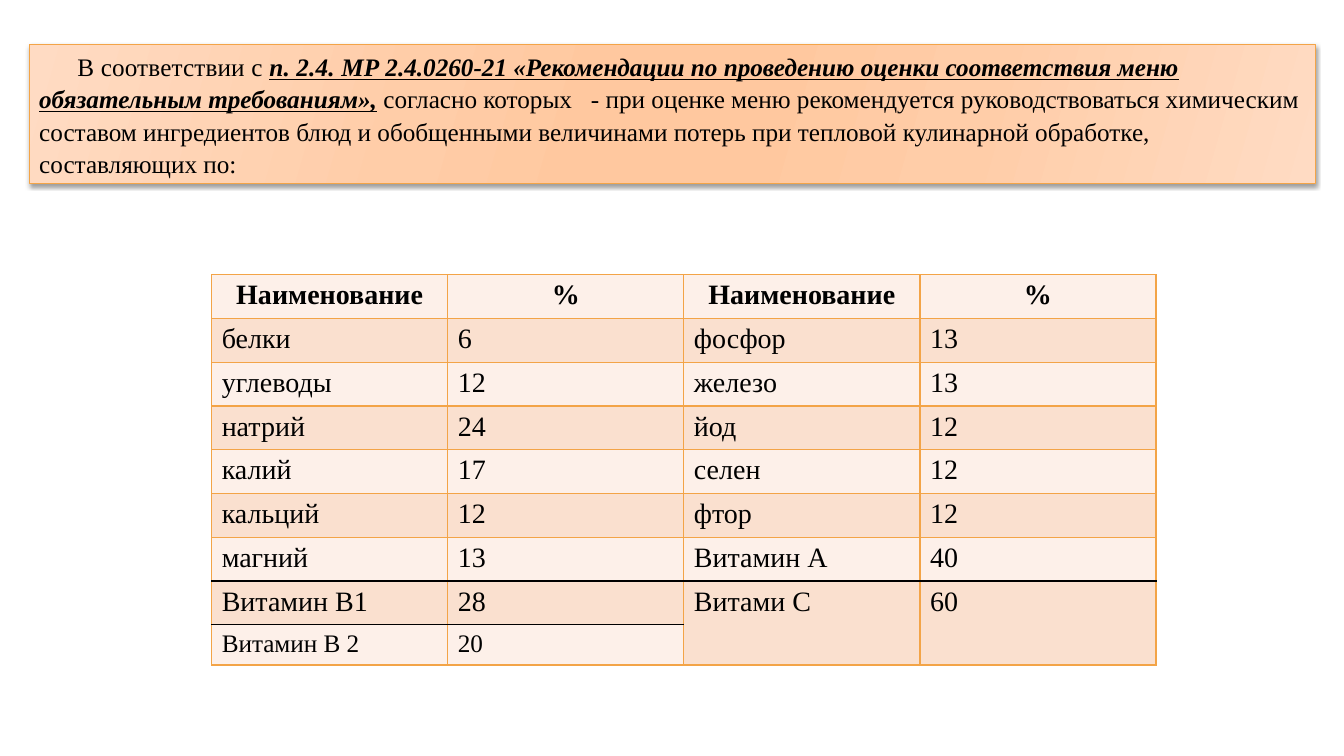
from lxml import etree
from pptx import Presentation
from pptx.dml.color import RGBColor
from pptx.enum import shapes, text
from pptx.oxml import ns
from pptx.util import Pt

FONT = "Times New Roman"
ORANGE, BLACK = "F3A447", "000000"
LIGHT_BAND, DARK_BAND = "FDF0E9", "FAE0CF"
GRADIENT = [(0, "FFDBC3"), (30, "FFCDA8"), (45, "FFC89F"),
            (55, "FFC89F"), (73, "FFCDA8"), (100, "FFDBC3")]
BANNER_RUNS = [
    ("В соответствии с ", False, 0.1),
    ("п. 2.4. ", True, 0.1),
    ("МР 2.4.0260-21 «Рекомендации по проведению оценки соответствия меню "
     "обязательным требованиям»,", True, 0),
    (" согласно которых   - при оценке меню рекомендуется руководствоваться "
     "химическим составом ингредиентов блюд и обобщенными величинами потерь "
     "при тепловой кулинарной обработке, составляющих по:", False, 0),
]
LOSSES = [
    ("Наименование", "%", "Наименование", "%"),
    ("белки", "6", "фосфор", "13"),
    ("углеводы", "12", "железо", "13"),
    ("натрий", "24", "йод", "12"),
    ("калий", "17", "селен", "12"),
    ("кальций", "12", "фтор", "12"),
    ("магний", "13", "Витамин А", "40"),
    ("Витамин В1", "28", "Витами С", "60"),
    ("Витамин В 2", "20", "", ""),
]


def rgb(color):
    return RGBColor.from_string(color)


def add_element(parent, tag, **attributes):
    values = {name: str(value) for name, value in attributes.items()}
    return etree.SubElement(parent, ns.qn(tag), values)


def style_font(font, size, bold=False):
    font.name, font.size, font.bold = FONT, Pt(size), bold
    font.color.rgb = rgb(BLACK)


def fill_gradient(shape, stops, angle):
    shape.fill.gradient()
    gradient = shape.element.spPr.find(ns.qn("a:gradFill"))
    for child in list(gradient):
        gradient.remove(child)
    stop_list = add_element(gradient, "a:gsLst")
    for position, color in stops:
        stop = add_element(stop_list, "a:gs", pos=position * 1000)
        add_element(stop, "a:srgbClr", val=color)
    add_element(gradient, "a:lin", ang=angle * 60000, scaled=0)


def add_soft_shadow(shape):
    shape.shadow.inherit = False
    effects = shape.element.spPr.find(ns.qn("a:effectLst"))
    shadow = add_element(effects, "a:outerShdw", blurRad=Pt(3.1), dist=Pt(1.6),
                         dir=90 * 60000, rotWithShape=0)
    color = add_element(shadow, "a:srgbClr", val=BLACK)
    add_element(color, "a:alpha", val=38000)


def add_banner(slide, left, top, width, height):
    banner = slide.shapes.add_shape(shapes.MSO_SHAPE.RECTANGLE, Pt(left), Pt(top),
                                    Pt(width), Pt(height))
    banner.line.color.rgb = rgb(ORANGE)
    banner.line.width = Pt(0.75)
    fill_gradient(banner, GRADIENT, 16)
    add_soft_shadow(banner)
    frame = banner.text_frame
    frame.word_wrap = True
    frame.auto_size = text.MSO_AUTO_SIZE.SHAPE_TO_FIT_TEXT
    frame.vertical_anchor = text.MSO_ANCHOR.TOP
    paragraph = frame.paragraphs[0]
    paragraph.alignment = text.PP_ALIGN.LEFT
    paragraph.line_spacing = 1.07
    properties = paragraph._p.get_or_add_pPr()
    properties.set("marL", "0")
    properties.set("indent", str(Pt(27.36)))
    for wording, emphasized, spacing in BANNER_RUNS:
        run = paragraph.add_run()
        run.text = wording
        style_font(run.font, 18, emphasized)
        run.font.italic = run.font.underline = emphasized
        run._r.get_or_add_rPr().set("spc", str(round(spacing * 100)))


def set_borders(cell, top, bottom):
    properties = cell._tc.get_or_add_tcPr()
    sides = {"a:lnL": ORANGE, "a:lnR": ORANGE, "a:lnT": top, "a:lnB": bottom}
    for index, (tag, color) in enumerate(sides.items()):
        line = add_element(properties, tag, w=Pt(1))
        fill = add_element(line, "a:solidFill")
        add_element(fill, "a:srgbClr", val=color)
        properties.insert(index, line)


def add_loss_table(slide, left, top, width, row_height, last_height):
    last = len(LOSSES) - 1
    height = row_height * last + last_height
    table = slide.shapes.add_table(len(LOSSES), len(LOSSES[0]), Pt(left), Pt(top),
                                   Pt(width), Pt(height)).table
    for column in table.columns:
        column.width = Pt(width / len(LOSSES[0]))
    for row_index, values in enumerate(LOSSES):
        is_last = row_index == last
        table.rows[row_index].height = Pt(last_height if is_last else row_height)
        for column_index, value in enumerate(values):
            cell = table.cell(row_index, column_index)
            merged = column_index >= 2 and row_index >= last - 1
            cell.fill.solid()
            cell.fill.fore_color.rgb = rgb(
                DARK_BAND if row_index % 2 or merged else LIGHT_BAND)
            black_top = row_index == last - 1 or (is_last and not merged)
            black_bottom = row_index == last - 2 or (
                row_index == last - 1 and not merged)
            set_borders(cell, BLACK if black_top else ORANGE,
                        BLACK if black_bottom else ORANGE)
            cell.text_frame.text = value
            paragraph = cell.text_frame.paragraphs[0]
            if row_index == 0:
                paragraph.alignment = text.PP_ALIGN.CENTER
            for run in paragraph.runs:
                style_font(run.font, 18 if is_last else 20, row_index == 0)
    for column_index in (2, 3):
        table.cell(last - 1, column_index).merge(table.cell(last, column_index))


def main():
    presentation = Presentation()
    presentation.slide_width, presentation.slide_height = Pt(960), Pt(540)
    slide = presentation.slides.add_slide(presentation.slide_layouts[6])
    add_banner(slide, 20.9, 31.7, 918.7, 99.4)
    add_loss_table(slide, 151.2, 196.3, 674.6, 31.25, 28.8)
    presentation.save("out.pptx")


if __name__ == "__main__":
    main()
